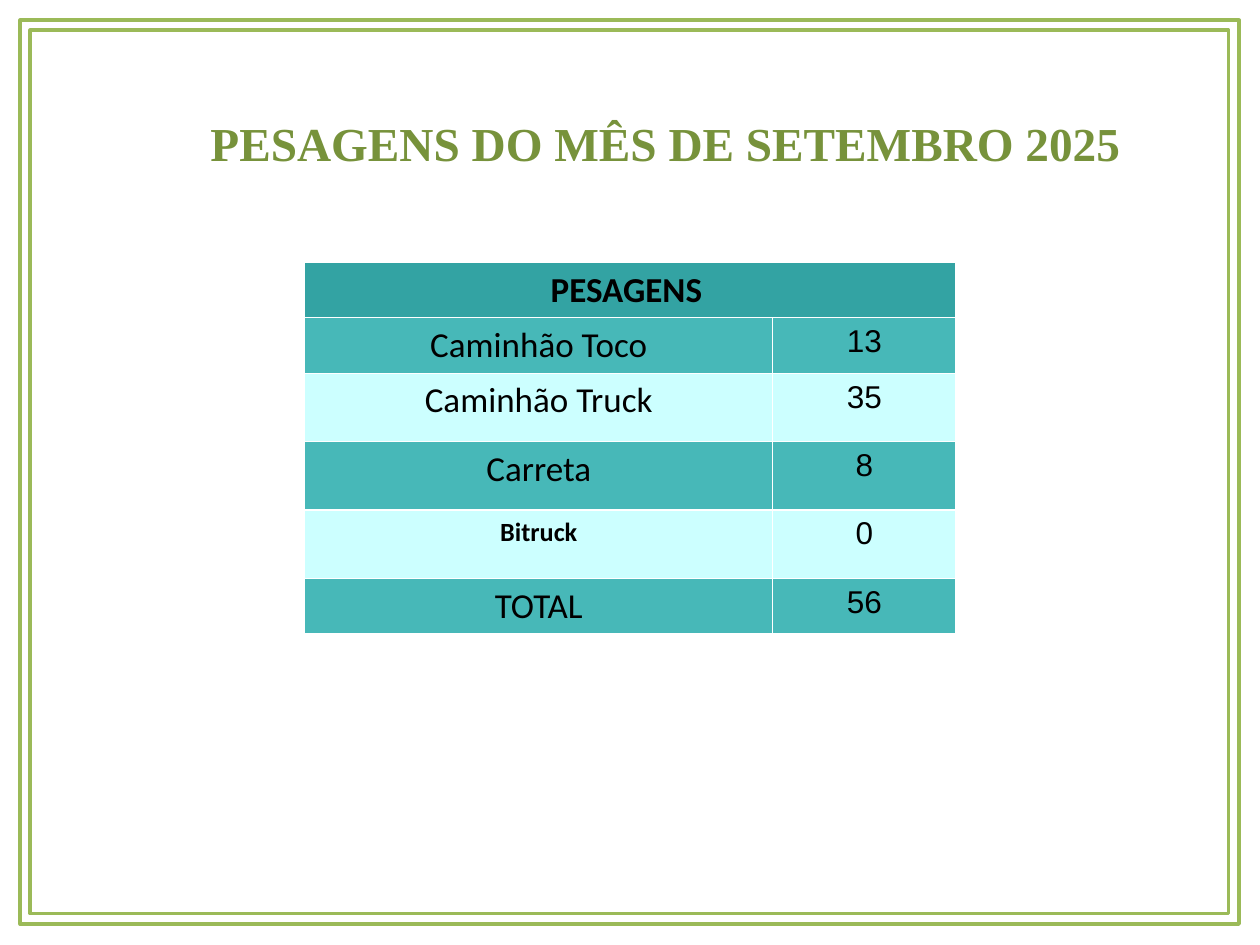
from lxml import etree
from pptx import Presentation
from pptx.dml.color import RGBColor
from pptx.enum.text import PP_ALIGN
from pptx.oxml.ns import qn
from pptx.util import Pt

CENTER = PP_ALIGN.CENTER
BLACK = RGBColor(0x00, 0x00, 0x00)
FRAME_GREEN = RGBColor(0x9B, 0xBA, 0x58)
TITLE_GREEN = RGBColor(0x77, 0x92, 0x3B)
HEADER_TEAL = RGBColor(0x33, 0xA3, 0xA3)
TEAL = RGBColor(0x47, 0xB8, 0xB8)
PALE_CYAN = RGBColor(0xCC, 0xFF, 0xFF)
BORDER_COLOR = "FFFFFF"

# Content
TITLE = "PESAGENS DO MÊS DE SETEMBRO 2025"
HEADER = "PESAGENS "
HEADER_HEIGHT = 31.6
# vehicle, weighings, row height, label size, label bold
WEIGHINGS = [
    ("Caminhão Toco", 13, 31.6, 20, False),
    ("Caminhão Truck", 35, 39.1, 20, False),
    ("Carreta", 8, 39.1, 20, False),
    ("Bitruck", 0, 39.1, 15, True),
    ("TOTAL", 56, 31.6, 20, False),
]
COLUMN_WIDTHS = (267.4, 104.6)
TABLE_LEFT, TABLE_TOP = 174.2, 150.1

# Frame contours: left, top, right, bottom
FRAME_CONTOURS = [(11.5, 11.5, 708, 528), (17.3, 17.3, 702, 522)]


def format_run(paragraph, size, font, color, bold):
    span = paragraph.runs[0]
    span.font.size = Pt(size)
    span.font.name = font
    span.font.bold = bold
    span.font.color.rgb = color


def add_borders(cell):
    properties = cell._tc.get_or_add_tcPr()
    for side in ("a:lnL", "a:lnR", "a:lnT", "a:lnB"):
        line = etree.SubElement(properties, qn(side), w=str(Pt(0.75)))
        fill = etree.SubElement(line, qn("a:solidFill"))
        etree.SubElement(fill, qn("a:srgbClr"), val=BORDER_COLOR)


def fill_cell(cell, text, fill, size, font, bold):
    cell.text_frame.text = text
    para = cell.text_frame.paragraphs[0]
    para.alignment = CENTER
    format_run(para, size, font, BLACK, bold)
    cell.fill.solid()
    cell.fill.fore_color.rgb = fill


deck = Presentation()
deck.slide_width, deck.slide_height = Pt(720), Pt(540)
page = deck.slides.add_slide(deck.slide_layouts[6])

# Double frame around the page
left, top, right, bottom = FRAME_CONTOURS[0]
builder = page.shapes.build_freeform(Pt(left), Pt(bottom))
for index, (left, top, right, bottom) in enumerate(FRAME_CONTOURS):
    if index:
        builder.move_to(Pt(left), Pt(bottom))
    corners = [(right, bottom), (right, top), (left, top)]
    builder.add_line_segments([(Pt(x), Pt(y)) for x, y in corners], close=True)
frame = builder.convert_to_shape()
frame.shadow.inherit = False
frame.fill.background()
frame.line.color.rgb = FRAME_GREEN
frame.line.width = Pt(2)

# Title
box = page.shapes.add_textbox(Pt(105.8), Pt(64.1), Pt(545), Pt(32.4))
text_frame = box.text_frame
text_frame.word_wrap = True
text_frame.margin_left, text_frame.margin_top = Pt(14.5), Pt(0.9)
text_frame.margin_right = text_frame.margin_bottom = 0
text_frame.text = TITLE
format_run(text_frame.paragraphs[0], 27, "Times New Roman", TITLE_GREEN, True)

# Weighings table
heights = [HEADER_HEIGHT] + [row[2] for row in WEIGHINGS]
table = page.shapes.add_table(
    len(heights), len(COLUMN_WIDTHS), Pt(TABLE_LEFT), Pt(TABLE_TOP),
    Pt(sum(COLUMN_WIDTHS)), Pt(sum(heights))).table
for column, width in zip(table.columns, COLUMN_WIDTHS):
    column.width = Pt(width)
for row, height in zip(table.rows, heights):
    row.height = Pt(height)
for cell in table.iter_cells():
    add_borders(cell)

table.cell(0, 0).merge(table.cell(0, 1))
fill_cell(table.cell(0, 0), HEADER, HEADER_TEAL, 20, "Calibri", True)
for number, (vehicle, count, _, size, bold) in enumerate(WEIGHINGS, start=1):
    band = TEAL if number % 2 else PALE_CYAN
    fill_cell(table.cell(number, 0), vehicle, band, size, "Calibri", bold)
    fill_cell(table.cell(number, 1), str(count), band, 18, "Arial", False)

deck.save("out.pptx")
